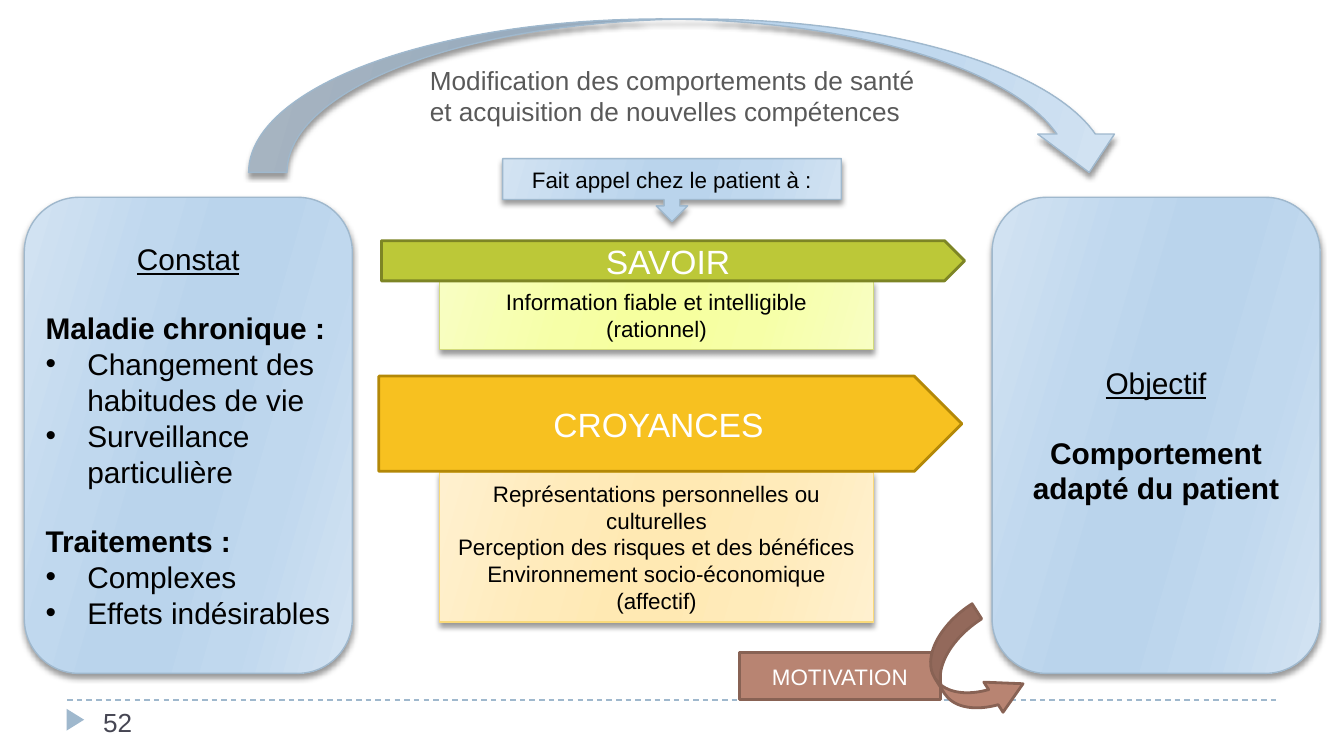
from dataclasses import dataclass
from typing import Optional

from lxml.etree import SubElement
from pptx import Presentation
from pptx.dml.color import RGBColor
from pptx.enum.dml import MSO_LINE
from pptx.enum.shapes import MSO_CONNECTOR, MSO_SHAPE
from pptx.enum.text import MSO_ANCHOR, MSO_AUTO_SIZE, PP_ALIGN
from pptx.oxml.ns import qn
from pptx.util import Cm, Pt

FONT = "Arial"
BLACK = RGBColor(0x00, 0x00, 0x00)
WHITE = RGBColor(0xFF, 0xFF, 0xFF)
GREY = RGBColor(0x59, 0x59, 0x59)
SLATE = RGBColor(0x46, 0x46, 0x53)
STEEL = RGBColor(0x9F, 0xB8, 0xCD)
LIME = RGBColor(0xD2, 0xDA, 0x7A)
SAND = RGBColor(0xFA, 0xDA, 0x7A)
GREEN, DARK_GREEN = RGBColor(0xBC, 0xC8, 0x38), RGBColor(0x7D, 0x85, 0x25)
GOLD, DARK_GOLD = RGBColor(0xF7, 0xC1, 0x20), RGBColor(0xB3, 0x88, 0x07)
BROWN, DARK_BROWN = RGBColor(0xB8, 0x84, 0x72), RGBColor(0x88, 0x62, 0x54)
# Outer, intermediate and central shade of each symmetrical gradient
BLUE_SHADES = tuple(map(RGBColor.from_string, ("D3E3F2", "C0D8EE", "BAD4EC")))
LIME_SHADES = tuple(map(RGBColor.from_string, ("F8FEC2", "F6FFA7", "F6FF9F")))
SAND_SHADES = tuple(map(RGBColor.from_string, ("FFF0CF", "FFEBBA", "FFE9B3")))
STOPS = ((0, 0), (30, 1), (45, 2), (55, 2), (73, 1), (100, 0))


@dataclass(frozen=True)
class Line:
    text: str
    size: int = 12
    color: RGBColor = BLACK
    align: PP_ALIGN = PP_ALIGN.CENTER
    bold: bool = False
    underline: bool = False
    bullet: bool = False
    before: int = 0


@dataclass(frozen=True)
class Block:
    """Filled shape; a tuple of shades gives a gradient with a soft shadow."""
    kind: MSO_SHAPE
    left: float
    top: float
    width: float
    height: float
    fill: RGBColor | tuple
    border: Optional[RGBColor] = None
    lines: tuple[Line, ...] = ()
    rotation: float = 0
    adjustments: tuple[float, ...] = ()
    side_margin: float = 0.25


def heading(text: str) -> Line:
    return Line(text, 16, underline=True)


def topic(text: str) -> Line:
    return Line(text, 16, align=PP_ALIGN.LEFT, bold=True, before=18)


def item(text: str) -> Line:
    return Line(text, 16, align=PP_ALIGN.LEFT, bullet=True)


def label(text: str, size: int = 18) -> Line:
    return Line(text, size, WHITE)


BLOCKS = (
    Block(MSO_SHAPE.ISOSCELES_TRIANGLE, 1.22, 13.44, 0.41, 0.33, STEEL, rotation=90),
    Block(MSO_SHAPE.ROUNDED_RECTANGLE, 0.46, 3.73, 6.2, 9, BLUE_SHADES, STEEL, (
        heading("Constat"),
        topic("Maladie chronique :"),
        item("Changement des habitudes de vie"),
        item("Surveillance particulière"),
        topic("Traitements :"),
        item("Complexes"),
        item("Effets indésirables"),
    ), side_margin=0.1),
    Block(MSO_SHAPE.ROUNDED_RECTANGLE, 18.75, 3.73, 6.2, 9, BLUE_SHADES, STEEL, (
        heading("Objectif"),
        Line("Comportement adapté du patient", 16, bold=True, before=18),
    )),
    Block(MSO_SHAPE.CURVED_DOWN_ARROW, 4.7, 0.36, 16.61, 2.9, BLUE_SHADES, STEEL),
    Block(MSO_SHAPE.RECTANGLE, 8.31, 5.31, 8.2, 1.3, LIME_SHADES, LIME, (
        Line("Information fiable et intelligible"),
        Line("(rationnel)"),
    )),
    Block(MSO_SHAPE.PENTAGON, 7.21, 4.55, 11.02, 0.76, GREEN, DARK_GREEN,
          (label("SAVOIR"),)),
    Block(MSO_SHAPE.RECTANGLE, 8.31, 8.92, 8.2, 2.84, SAND_SHADES, SAND, (
        Line("Représentations personnelles ou culturelles"),
        Line("Perception des risques et des bénéfices"),
        Line("Environnement socio-économique"),
        Line("(affectif)"),
    )),
    Block(MSO_SHAPE.PENTAGON, 7.16, 7.11, 11.02, 1.8, GOLD, DARK_GOLD,
          (label("CROYANCES"),)),
    Block(MSO_SHAPE.RECTANGLE, 13.97, 12.34, 3.81, 0.89, BROWN, DARK_BROWN,
          (label("MOTIVATION", 12),)),
    Block(MSO_SHAPE.CURVED_RIGHT_ARROW, 17.7, 11.61, 1.35, 2.13, BROWN, DARK_BROWN,
          rotation=327.5, adjustments=(0.25, 0.5, 0.45)),
    Block(MSO_SHAPE.DOWN_ARROW_CALLOUT, 9.5, 3, 6.4, 1.19, BLUE_SHADES, STEEL,
          (Line("Fait appel chez le patient à :"),)),
)


def write(frame, lines: tuple[Line, ...]) -> None:
    for index, line in enumerate(lines):
        para = frame.add_paragraph() if index else frame.paragraphs[0]
        para.text = line.text
        para.alignment = line.align
        if line.before:
            para.space_before = Pt(line.before)
        if line.bullet:
            properties = para._p.get_or_add_pPr()
            properties.set("marL", str(Cm(0.79)))
            properties.set("indent", str(-Cm(0.79)))
            SubElement(properties, qn("a:buFont"), typeface=FONT)
            SubElement(properties, qn("a:buChar"), char="•")
        font = para.font
        font.name, font.size = FONT, Pt(line.size)
        font.bold, font.underline = line.bold, line.underline
        font.color.rgb = line.color


def fill_gradient(shape, shades: tuple) -> None:
    shape.fill.gradient()
    shape.fill.gradient_angle = 344
    stops = shape._element.spPr.find(qn("a:gradFill")).find(qn("a:gsLst"))
    for stop in list(stops):
        stops.remove(stop)
    for position, shade in STOPS:
        stop = SubElement(stops, qn("a:gs"), pos=str(position * 1000))
        SubElement(stop, qn("a:srgbClr"), val=str(shades[shade]))


def add_soft_shadow(shape) -> None:
    effects = shape._element.spPr.find(qn("a:effectLst"))
    shadow = SubElement(effects, qn("a:outerShdw"), blurRad=str(Pt(3)),
                        dist=str(Pt(2)), dir="5400000", rotWithShape="0")
    color = SubElement(shadow, qn("a:srgbClr"), val=str(BLACK))
    SubElement(color, qn("a:alpha"), val="40000")


def add_block(page, block: Block) -> None:
    shape = page.shapes.add_shape(block.kind, Cm(block.left), Cm(block.top),
                                  Cm(block.width), Cm(block.height))
    shape.rotation = block.rotation
    for index, value in enumerate(block.adjustments):
        shape.adjustments[index] = value
    shape.shadow.inherit = False
    shaded = not isinstance(block.fill, RGBColor)
    if shaded:
        fill_gradient(shape, block.fill)
        add_soft_shadow(shape)
    else:
        shape.fill.solid()
        shape.fill.fore_color.rgb = block.fill
    if block.border is None:
        shape.line.fill.background()
    else:
        shape.line.color.rgb = block.border
        shape.line.width = Pt(0.75 if shaded else 1.5)
    frame = shape.text_frame
    frame.word_wrap = True
    frame.vertical_anchor = MSO_ANCHOR.MIDDLE
    frame.margin_left = frame.margin_right = Cm(block.side_margin)
    write(frame, block.lines)


def add_title(page) -> None:
    title = page.shapes.title
    title.left, title.top, title.width, title.height = Cm(7.87), Cm(1.09), Cm(9.7), Cm(1.45)
    frame = title.text_frame
    frame.word_wrap = False
    frame.auto_size = MSO_AUTO_SIZE.NONE
    frame.vertical_anchor = MSO_ANCHOR.TOP
    write(frame, tuple(Line(text, 14, GREY, PP_ALIGN.LEFT) for text in (
        "Modification des comportements de santé",
        "et acquisition de nouvelles compétences")))


def add_footer(page) -> None:
    rule = page.shapes.add_connector(MSO_CONNECTOR.STRAIGHT, Cm(1.27), Cm(13.23),
                                     Cm(24.13), Cm(13.23))
    rule.line.color.rgb = STEEL
    rule.line.width = Pt(0.75)
    rule.line.dash_style = MSO_LINE.DASH
    SubElement(rule._element.spPr, qn("a:effectLst"))
    number = page.shapes.add_textbox(Cm(1.7), Cm(13.23), Cm(5.51), Cm(0.76))
    number.text_frame.word_wrap = True
    write(number.text_frame, (Line("52", 14, SLATE, PP_ALIGN.LEFT),))


def main() -> None:
    deck = Presentation()
    deck.slide_width, deck.slide_height = Cm(25.4), Cm(14.29)
    page = deck.slides.add_slide(deck.slide_layouts[5])
    add_title(page)
    add_footer(page)
    for block in BLOCKS:
        add_block(page, block)
    deck.save("out.pptx")


if __name__ == "__main__":
    main()
